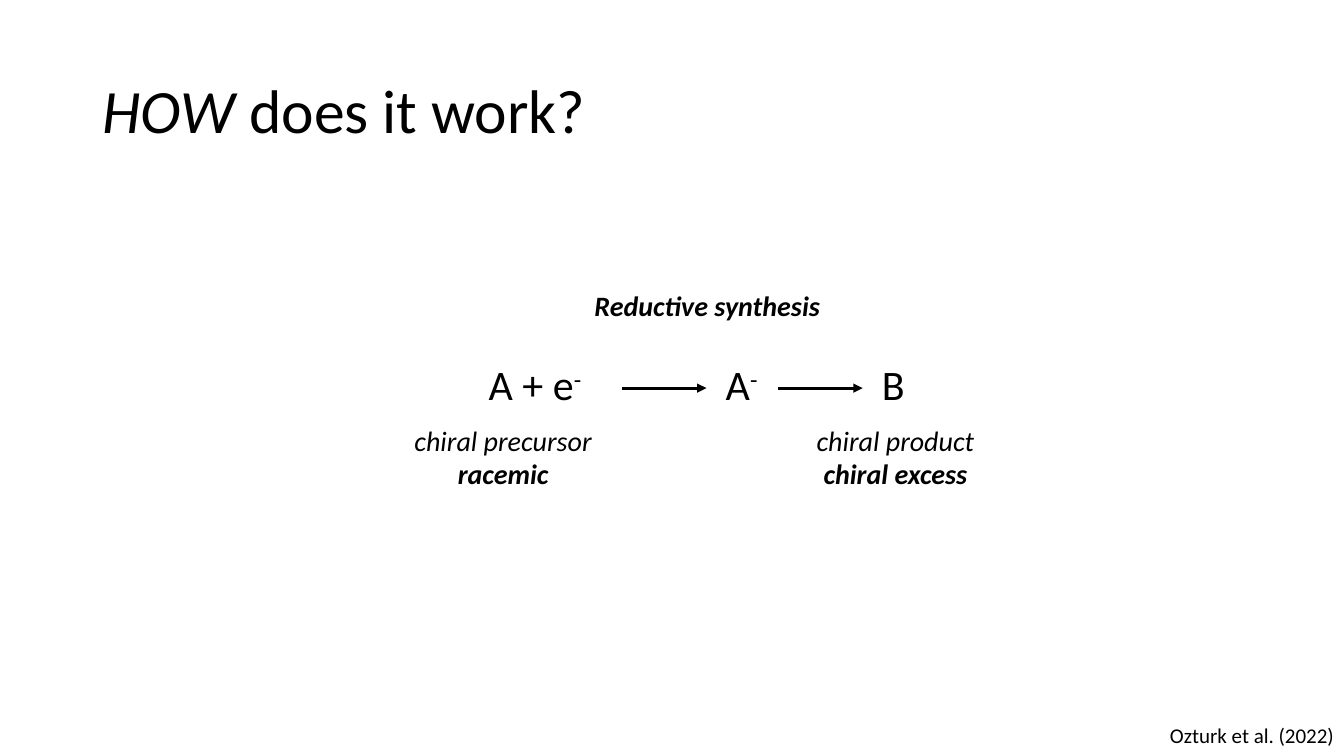
from dataclasses import dataclass

from lxml.etree import SubElement
from pptx import Presentation
from pptx.dml.color import RGBColor
from pptx.enum.shapes import MSO_CONNECTOR
from pptx.enum.text import MSO_ANCHOR, MSO_AUTO_SIZE, PP_ALIGN
from pptx.oxml.ns import qn
from pptx.util import Inches, Pt

COLUMNS, ROWS = 160, 90
UNIT = Inches(7.5) / ROWS


@dataclass(frozen=True)
class Theme:
    font: str = "Calibri"
    ink: RGBColor = RGBColor(0, 0, 0)
    title: int = 44
    formula: int = 30
    label: int = 20
    citation: int = 15
    line: float = 2.25


THEME = Theme()


def grid(*lengths):
    return [round(length * UNIT) for length in lengths]


def style(p, size, align=PP_ALIGN.LEFT, bold=None, italic=None):
    p.alignment = align
    f = p.font
    f.name, f.size, f.color.rgb = THEME.font, Pt(size), THEME.ink
    f.bold, f.italic = bold, italic


def add_text(s, box, lines, size, align=PP_ALIGN.LEFT, italic=None):
    tf = s.shapes.add_textbox(*grid(*box)).text_frame
    tf.word_wrap = True
    for i, (text, bold) in enumerate(lines):
        p = tf.paragraphs[0] if i == 0 else tf.add_paragraph()
        p.add_run().text = text
        style(p, size, align, bold, italic)
    return tf


def add_title(s, box, emphasis, rest):
    sp = s.shapes.title
    sp.left, sp.top, sp.width, sp.height = grid(*box)
    tf = sp.text_frame
    tf.auto_size = MSO_AUTO_SIZE.NONE
    tf.vertical_anchor = MSO_ANCHOR.MIDDLE
    p = tf.paragraphs[0]
    style(p, THEME.title)
    p.line_spacing = 0.9
    r = p.add_run()
    r.text, r.font.italic = emphasis, True
    p.add_run().text = rest


def add_species(s, left, width, symbol, charge="", indent=1.2):
    tf = add_text(s, (left, 42.1, width, 7.3), [(symbol, None)], THEME.formula)
    tf.margin_left = grid(indent)[0]
    if charge:
        r = tf.paragraphs[0].add_run()
        r.text = charge
        r._r.get_or_add_rPr().set("baseline", "30000")


def add_label(s, left, top, height, *lines):
    add_text(s, (left, top, 35.4, height), lines, THEME.label, PP_ALIGN.CENTER, True)


def add_arrow(s, left, top=46.2, length=10.1):
    line = s.shapes.add_connector(
        MSO_CONNECTOR.STRAIGHT, *grid(left, top, left + length, top))
    line.line.color.rgb = THEME.ink
    line.line.width = Pt(THEME.line)
    SubElement(line.line._get_or_add_ln(), qn("a:tailEnd"), type="triangle")
    SubElement(line._element.spPr, qn("a:effectLst"))


def add_citation(s, box, text):
    tf = add_text(s, box, [(text, None)], THEME.citation, PP_ALIGN.RIGHT)
    tf.vertical_anchor = MSO_ANCHOR.MIDDLE
    tf.paragraphs[0].line_spacing = 0.9


def main():
    prs = Presentation()
    prs.slide_width, prs.slide_height = grid(COLUMNS, ROWS)
    s = prs.slides.add_slide(prs.slide_layouts[5])

    add_title(s, (11, 4.8, 138, 17.4), "HOW", " does it work?")
    add_citation(s, (134.4, 85.3, 25.6, 4.8), "Ozturk et al. (2022)")

    add_species(s, 57, 16, "A + e", "-")
    add_arrow(s, 74)
    add_species(s, 84.1, 9.6, "A", "-", indent=2.3)
    add_arrow(s, 92.6)
    add_species(s, 103.8, 4.8, "B")

    add_label(s, 66.5, 33.8, 5.3, ("Reductive synthesis", True))
    add_label(s, 42.2, 49.8, 9.2, ("chiral precursor", None), ("racemic", True))
    add_label(s, 88.9, 49.8, 9.2, ("chiral product", None), ("chiral excess", True))

    prs.save("out.pptx")


if __name__ == "__main__":
    main()
